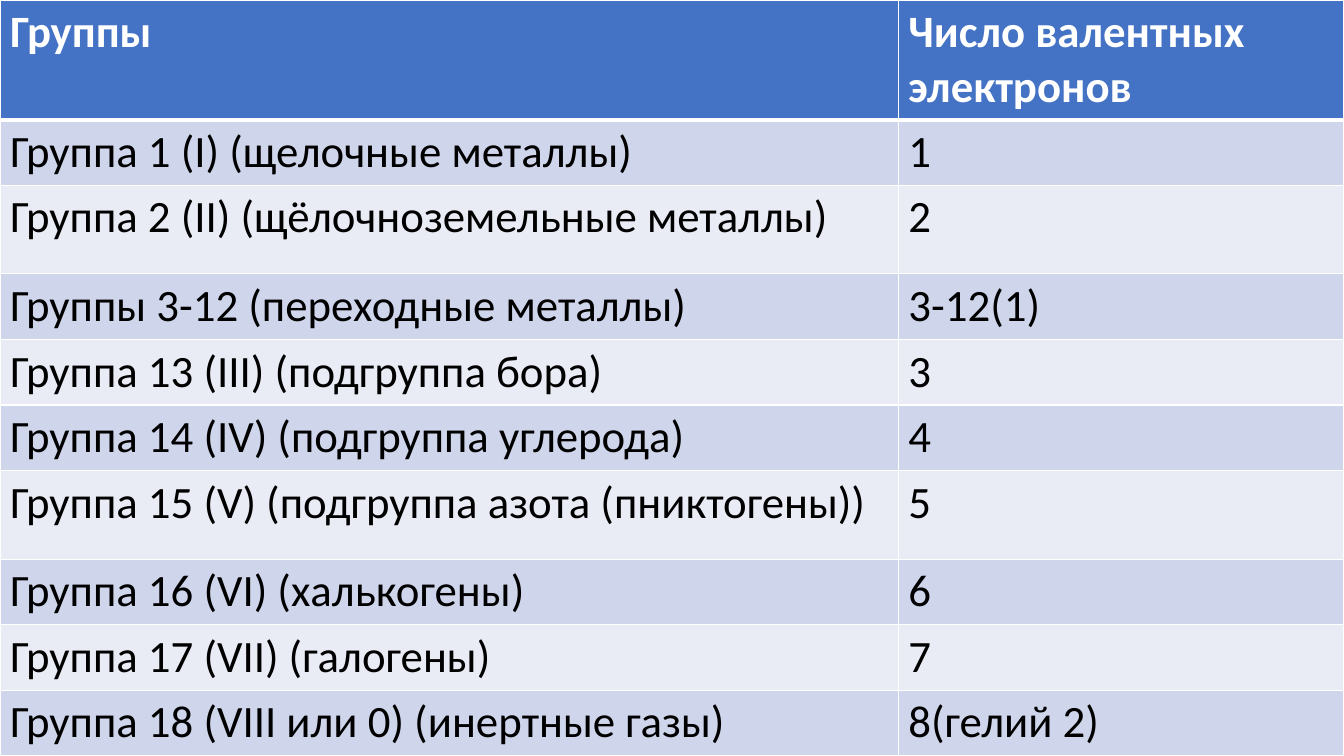
"""Build a slide with a table of valence electrons by group."""
import dataclasses
import pptx
import pptx.dml.color
import pptx.oxml
import pptx.oxml.ns
import pptx.util
from pptx.util import Inches

ROWS = [
    ("Группы", "Число валентных электронов"),
    ("Группа 1 (I) (щелочные металлы)", "1"),
    ("Группа 2 (II) (щёлочноземельные металлы)", "2"),
    ("Группы 3-12 (переходные металлы)", "3-12(1)"),
    ("Группа 13 (III) (подгруппа бора)", "3"),
    ("Группа 14 (IV) (подгруппа углерода)", "4"),
    ("Группа 15 (V) (подгруппа азота (пниктогены))", "5"),
    ("Группа 16 (VI) (халькогены)", "6"),
    ("Группа 17 (VII) (галогены)", "7"),
    ("Группа 18 (VIII или 0) (инертные газы)", "8(гелий 2)"),
]
WIDTHS = (8.91, 4.42)
HIGH = 0.65
TALL = {0: 1.18, 2: 0.88, 6: 0.88}


@dataclasses.dataclass(frozen=True)
class Theme:
    font: str = "Calibri"
    size: int = 32
    head: str = "4472C4"
    bands: tuple = ("E9EBF5", "CFD5EA")
    light: str = "FFFFFF"
    dark: str = "000000"
    thin: int = 1
    thick: int = 3


THEME = Theme()


def color(code):
    return pptx.dml.color.RGBColor.from_string(code)


def edge(cell, side, width):
    space = pptx.oxml.ns.nsdecls("a")
    line = pptx.oxml.parse_xml(
        f'<a:{side} {space} w="{pptx.util.Pt(width)}"><a:solidFill>'
        f'<a:srgbClr val="{THEME.light}"/></a:solidFill></a:{side}>')
    return line


def frame(cell, top, bottom):
    sides = {"lnL": THEME.thin, "lnR": THEME.thin, "lnT": top, "lnB": bottom}
    props = cell._tc.get_or_add_tcPr()
    for spot, (side, width) in enumerate(sides.items()):
        props.insert(spot, edge(cell, side, width))


def style(cell, text, row):
    head = row == 0
    cell.text_frame.text = text
    font = cell.text_frame.paragraphs[0].runs[0].font
    font.name, font.size, font.bold = THEME.font, pptx.util.Pt(THEME.size), head
    font.color.rgb = color(THEME.light if head else THEME.dark)
    cell.fill.solid()
    cell.fill.fore_color.rgb = color(THEME.head if head else THEME.bands[row % 2])
    frame(cell, THEME.thick if row == 1 else THEME.thin,
          THEME.thick if head else THEME.thin)


def main():
    deck = pptx.Presentation()
    deck.slide_width, deck.slide_height = Inches(13.33), Inches(7.5)
    slide = deck.slides.add_slide(deck.slide_layouts[6])
    highs = [TALL.get(row, HIGH) for row in range(len(ROWS))]
    table = slide.shapes.add_table(
        len(ROWS), len(WIDTHS), 0, 0, Inches(sum(WIDTHS)), Inches(sum(highs))).table
    for col, width in zip(table.columns, WIDTHS):
        col.width = Inches(width)
    for row, texts in enumerate(ROWS):
        table.rows[row].height = Inches(highs[row])
        for col, text in enumerate(texts):
            style(table.cell(row, col), text, row)
    deck.save("out.pptx")


if __name__ == "__main__":
    main()
